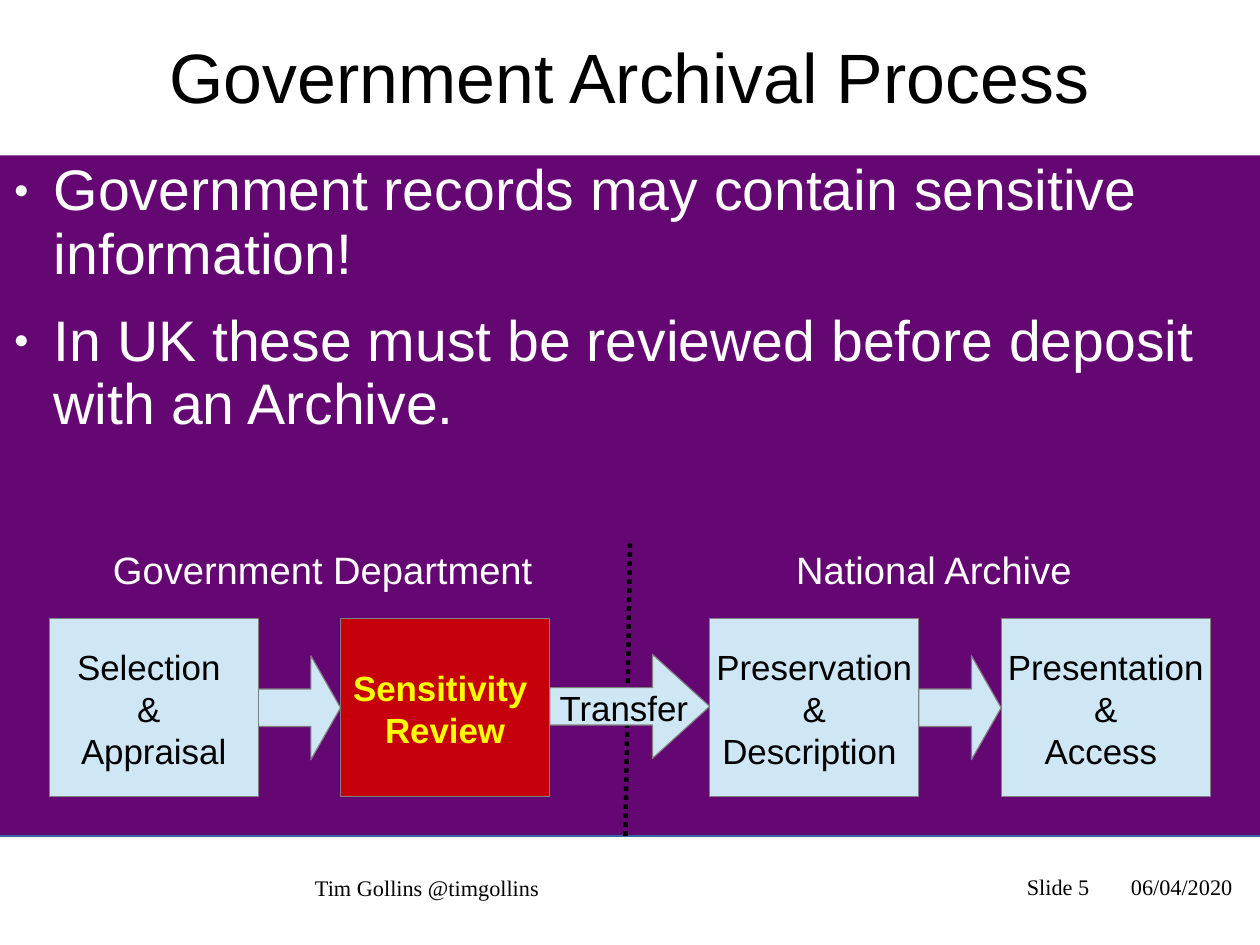
"""Build the Government Archival Process slide."""
from lxml import etree
from pptx import Presentation, util as u
from pptx.dml.color import RGBColor
from pptx.enum import dml, shapes, text
from pptx.oxml.ns import qn

COLORS = {"purple": "640772", "blue": "3465A4", "pale": "CFE7F5", "red": "C5000B",
          "grey": "808080", "black": "000000", "white": "FFFFFF", "yellow": "FFFF00"}
ALIGN = text.PP_ALIGN

deck = Presentation()
deck.slide_width, deck.slide_height = u.Cm(28), u.Cm(21)
page = deck.slides.add_slide(deck.slide_layouts[1])


def area(left, top, width, height):
    """Turn percentages of the slide into lengths."""
    across, down = deck.slide_width / 100, deck.slide_height / 100
    return [round(n) for n in (left * across, top * down, width * across, height * down)]


def write(box, lines, size=22, color="black", font="Arial", bold=False, align=ALIGN.CENTER,
          anchor=text.MSO_ANCHOR.MIDDLE, insets=(0.1, 0.07, 0.1, 0.05), wrap=True,
          spacing=None, before=0):
    """Fill a shape with formatted paragraphs."""
    frame = box.text_frame
    frame.auto_size = text.MSO_AUTO_SIZE.NONE
    frame.word_wrap, frame.vertical_anchor = wrap, anchor
    (frame.margin_left, frame.margin_top,
     frame.margin_right, frame.margin_bottom) = [u.Inches(n) for n in insets]
    for index, line in enumerate(lines):
        para = frame.add_paragraph() if index else frame.paragraphs[0]
        para.alignment, para.line_spacing = align, spacing
        para.space_before = u.Pt(before if index else 0)
        span = para.add_run()
        span.text = line
        span.font.size, span.font.name, span.font.bold = u.Pt(size), font, bold
        span.font.color.rgb = RGBColor.from_string(COLORS[color])


title, body = page.placeholders
title.left, title.top, title.width, title.height = area(0, 0, 100, 16.44)
title.fill.solid()
title.fill.fore_color.rgb = RGBColor.from_string(COLORS["white"])
write(title, ["Government Archival Process"], size=44, insets=(0, 0.04, 0, 0), spacing=0.93)

body.left, body.top, body.width, body.height = area(0, 16.44, 100, 72.07)
write(body, ["Government records may contain sensitive information!",
             "In UK these must be reviewed before deposit with an Archive."],
      size=36, color="white", align=ALIGN.LEFT, anchor=text.MSO_ANCHOR.TOP,
      insets=(0, 0.04, 0, 0), spacing=0.93, before=14.2)
for para in body.text_frame.paragraphs:
    props = para._p.get_or_add_pPr()
    props.set("marL", str(u.Inches(0.47)))
    props.set("indent", str(u.Inches(-0.35)))
    bullet_color = etree.SubElement(props, qn("a:buClr"))
    etree.SubElement(bullet_color, qn("a:srgbClr"), val=COLORS["white"])
    etree.SubElement(props, qn("a:buSzPct"), val="45000")
    etree.SubElement(props, qn("a:buChar"), char="●")

divider = page.shapes.add_connector(shapes.MSO_CONNECTOR.STRAIGHT,
                                    *area(50, 57.5, 49.64, 88.7))
divider.line.color.rgb = RGBColor.from_string(COLORS["black"])
divider.line.width = u.Pt(2.83)
divider.line.dash_style = dml.MSO_LINE.ROUND_DOT
etree.SubElement(divider._element.spPr, qn("a:effectLst"))

STAGE_WIDTH = 16.6
STEP = 23.13
starts = [first + STEP * step for first in (3.9, 56.33) for step in (0, 1)]
stages = [["Selection ", "& ", "Appraisal"], ["Sensitivity ", "Review"],
          ["Preservation", "&", "Description "], ["Presentation", "&", "Access "]]
RECT, ARROW = shapes.MSO_SHAPE.RECTANGLE, shapes.MSO_SHAPE.RIGHT_ARROW

parts = [(RECT, (-0.27, 0, 100.36, 88.47), "purple", "blue", [])]
for start, end in zip(starts, starts[1:]):
    left = start + STAGE_WIDTH
    label = [" Transfer"] if end == starts[2] else []
    top = 69.25 if label else 69.4
    parts.append((ARROW, (left, top, end - left, 11), "pale", "grey", label))
for start, lines in zip(starts, stages):
    fill = "red" if "Review" in lines else "pale"
    parts.append((RECT, (start, 65.42, STAGE_WIDTH, 18.86), fill, "grey", lines))

for kind, place, fill, edge, lines in parts:
    box = page.shapes.add_shape(kind, *area(*place))
    box.shadow.inherit = False
    box.fill.solid()
    box.fill.fore_color.rgb = RGBColor.from_string(COLORS[fill])
    box.line.color.rgb = RGBColor.from_string(COLORS[edge])
    box.line.width = u.Pt(0.75)
    if kind == ARROW:
        box.adjustments[0] = 0.36
        box.adjustments[1] = 0.55 if lines else 0.36
    if fill == "purple":
        title._element.addprevious(box._element)
    if lines:
        alert = fill == "red"
        write(box, lines, color="yellow" if alert else "black", bold=alert, wrap=False)

for left, label in ((8.08, "Government Department"), (62.3, "National Archive")):
    box = page.shapes.add_textbox(*area(left, 57, 35.4, 5.08))
    write(box, [label], size=24, color="white", align=ALIGN.LEFT, anchor=text.MSO_ANCHOR.TOP)

for left, top, width, label, align in (
        (25, 92.5, 46.46, "Tim Gollins @timgollins", ALIGN.LEFT),
        (72.85, 92.4, 13.61, "Slide 5", ALIGN.RIGHT),
        (87.1, 92.4, 10.71, "06/04/2020", ALIGN.RIGHT)):
    box = page.shapes.add_textbox(*area(left, top, width, 3.02))
    write(box, [label], size=14, font="Times New Roman", align=align,
          anchor=text.MSO_ANCHOR.TOP, insets=(0, 0, 0, 0))

deck.save("out.pptx")
